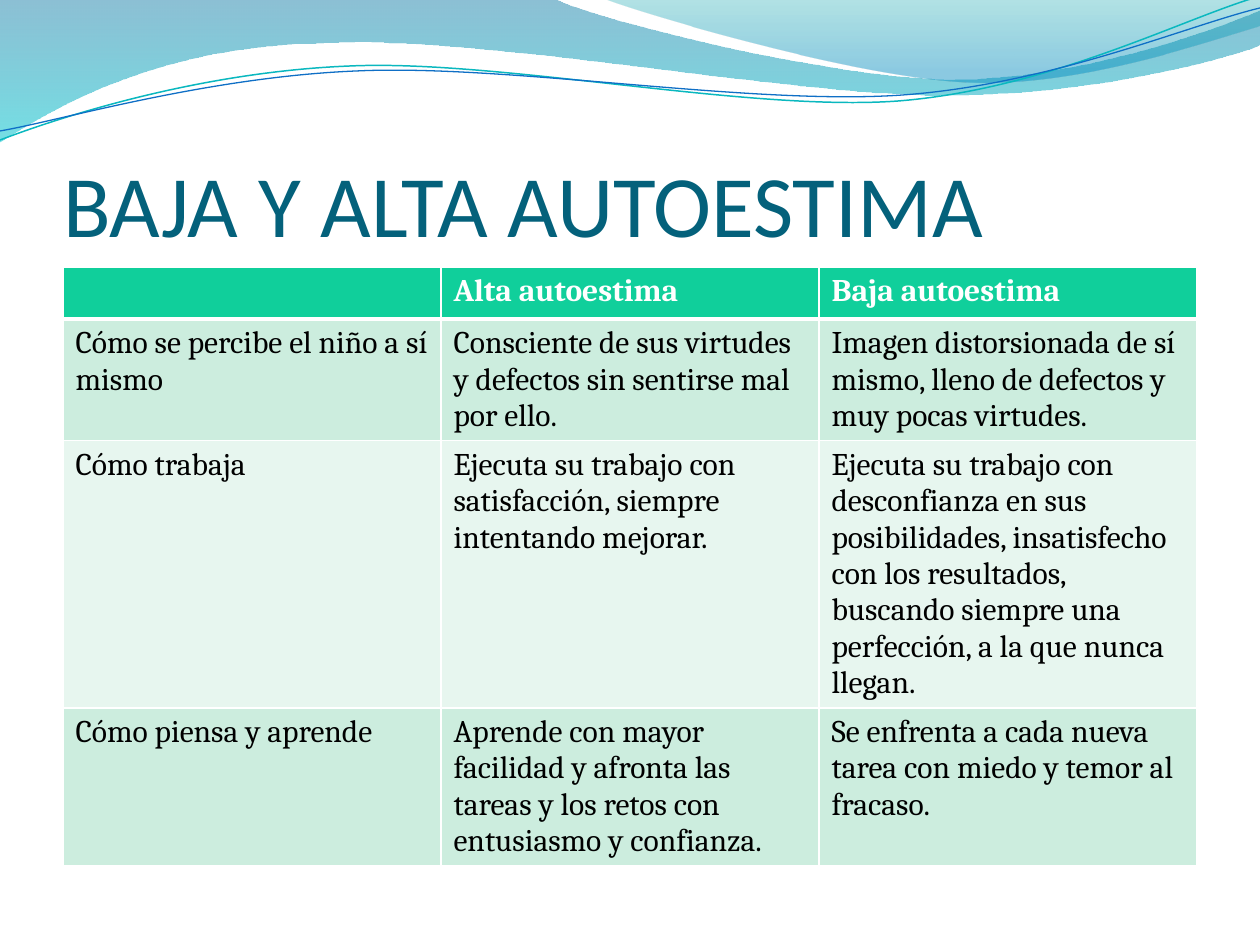
import lxml.etree
import pptx
import pptx.dml.color
import pptx.enum.text
import pptx.oxml.ns
import pptx.util

PX = 914400 / 126
COLORS = {
    "title": "04617B", "header": "10CF9B", "band_dark": "CCEDDE", "band_light": "E7F6EF",
    "white": "FFFFFF", "black": "000000", "teal_line": "0AB8BF", "blue_line": "0F6FC6",
    "deep_blue": "0074A1", "aqua": "00C6CF", "teal": "00A1A9", "sky": "008BBF",
}
# Each step is one point (straight line) or three points (Bézier curve).
BACK_WAVE = [
    [(0, 0)], [(554, -1)],
    [(600, 21), (837, 79), (955, 79)], [(1075, 79), (1207, 33), (1260, 11)],
    [(1261, 45)],
    [(1239, 55), (1096, 96), (940, 95)], [(784, 95), (481, 35), (324, 43)],
    [(163, 45), (58, 105), (-1, 142)],
]
FRONT_WAVE = [
    [(604, -1)],
    [(641, 14), (859, 78), (969, 82)], [(1079, 87), (1211, 40), (1260, 26)],
    [(1260, 0)],
]
TEAL_CURVE = [
    [(0, 140)],
    [(60, 117), (199, 72), (349, 66)], [(498, 59), (747, 112), (898, 101)],
    [(1049, 89), (1182, 19), (1257, -3)],
]
BLUE_CURVE = [
    [(0, 131)],
    [(59, 121), (207, 77), (357, 71)], [(508, 64), (752, 106), (903, 95)],
    [(1053, 84), (1186, 26), (1260, 8)],
]
ROWS = [
    ["", "Alta autoestima", "Baja autoestima"],
    ["Cómo se percibe el niño a sí mismo",
     "Consciente de sus virtudes y defectos sin sentirse mal por ello.",
     "Imagen distorsionada de sí mismo, lleno de defectos y muy pocas virtudes."],
    ["Cómo trabaja",
     "Ejecuta su trabajo con satisfacción, siempre intentando mejorar.",
     "Ejecuta su trabajo con desconfianza en sus posibilidades, insatisfecho con los "
     "resultados, buscando siempre una perfección, a la que nunca llegan."],
    ["Cómo piensa y aprende",
     "Aprende con mayor facilidad y afronta las tareas y los retos con entusiasmo y confianza.",
     "Se enfrenta a cada nueva tarea con miedo y temor al fracaso."],
]


def px(n):
    return pptx.util.Emu(round(n * PX))


def rgb(name):
    return pptx.dml.color.RGBColor.from_string(COLORS[name])


def sub(parent, tag, **attrs):
    return lxml.etree.SubElement(parent, pptx.oxml.ns.qn(tag), attrs)


def add_run(p, text, font, size, color, bold=False):
    r = p.add_run()
    r.text = text
    r.font.name, r.font.size, r.font.bold = font, pptx.util.Pt(size), bold
    r.font.color.rgb = rgb(color)


def add_curve(slide, steps, closed):
    """Build a freeform through all points, then turn each three-point step into a Bézier."""
    points = [pt for step in steps for pt in step]
    builder = slide.shapes.build_freeform(*points[0], scale=PX)
    builder.add_line_segments(points[1:], close=closed)
    sp = builder.convert_to_shape()
    sp.shadow.inherit = False
    segments = iter(list(sp.element.iter(pptx.oxml.ns.qn("a:lnTo"))))
    for step in steps[1:]:
        group = [next(segments) for _ in step]
        if len(group) == 3:
            curve = lxml.etree.Element(pptx.oxml.ns.qn("a:cubicBezTo"))
            group[0].addprevious(curve)
            for segment in group:
                curve.append(segment[0])
                segment.getparent().remove(segment)
    return sp


def add_wave(slide, steps, stops):
    """Add a filled wave; stops are (position, colour, opacity in percent), top to bottom."""
    sp = add_curve(slide, steps, True)
    sp.line.fill.background()
    sp.fill.gradient()
    sp.fill.gradient_angle = 270
    for stop, (position, color, _) in zip(sp.fill.gradient_stops, stops):
        stop.position = position
        stop.color.rgb = rgb(color)
    colors = sp.element.spPr.iter(pptx.oxml.ns.qn("a:srgbClr"))
    for clr, (_, _, opacity) in zip(colors, stops):
        sub(clr, "a:alpha", val=str(opacity * 1000))


def add_wave_line(slide, steps, color, width):
    sp = add_curve(slide, steps, False)
    sp.fill.background()
    sp.line.color.rgb = rgb(color)
    sp.line.width = pptx.util.Pt(width)


def add_title(slide, text):
    title = slide.shapes.title
    title.left, title.top, title.width, title.height = map(px, (63, 97, 1134, 158))
    tf = title.text_frame
    tf.auto_size = pptx.enum.text.MSO_AUTO_SIZE.NONE
    tf.word_wrap = True
    tf.vertical_anchor = pptx.enum.text.MSO_ANCHOR.BOTTOM
    tf.margin_left = tf.margin_right = tf.margin_bottom = 0
    tf.margin_top = pptx.util.Inches(0.05)
    p = tf.paragraphs[0]
    p.alignment = pptx.enum.text.PP_ALIGN.LEFT
    add_run(p, text, "Calibri", 50, "title")


def set_borders(cell, widths):
    tcPr = cell._tc.get_or_add_tcPr()
    for side, width in widths.items():
        ln = sub(tcPr, f"a:ln{side}", w=str(pptx.util.Pt(width)))
        sub(sub(ln, "a:solidFill"), "a:srgbClr", val=COLORS["white"])


def add_comparison_table(slide):
    frame = slide.shapes.add_table(len(ROWS), len(ROWS[0]), px(63), px(267),
                                   px(1134), px(52 * len(ROWS)))
    for i, texts in enumerate(ROWS):
        header = i == 0
        fill = "header" if header else "band_dark" if i % 2 else "band_light"
        for j, text in enumerate(texts):
            cell = frame.table.cell(i, j)
            set_borders(cell, {"L": 1, "R": 1, "T": 3 if i == 1 else 1, "B": 3 if header else 1})
            cell.fill.solid()
            cell.fill.fore_color.rgb = rgb(fill)
            if text:
                add_run(cell.text_frame.paragraphs[0], text, "Cambria", 18,
                        "white" if header else "black", header)


def main():
    prs = pptx.Presentation()
    prs.slide_width, prs.slide_height = px(1260), px(945)
    slide = prs.slides.add_slide(prs.slide_layouts[5])
    add_wave(slide, BACK_WAVE, [(0, "deep_blue", 45), (1, "aqua", 55)])
    add_wave(slide, FRONT_WAVE, [(0, "teal", 30), (0.8, "sky", 45)])
    add_wave_line(slide, TEAL_CURVE, "teal_line", 0.85)
    add_wave_line(slide, BLUE_CURVE, "blue_line", 0.75)
    add_title(slide, "BAJA Y ALTA AUTOESTIMA")
    add_comparison_table(slide)
    prs.save("out.pptx")


if __name__ == "__main__":
    main()
